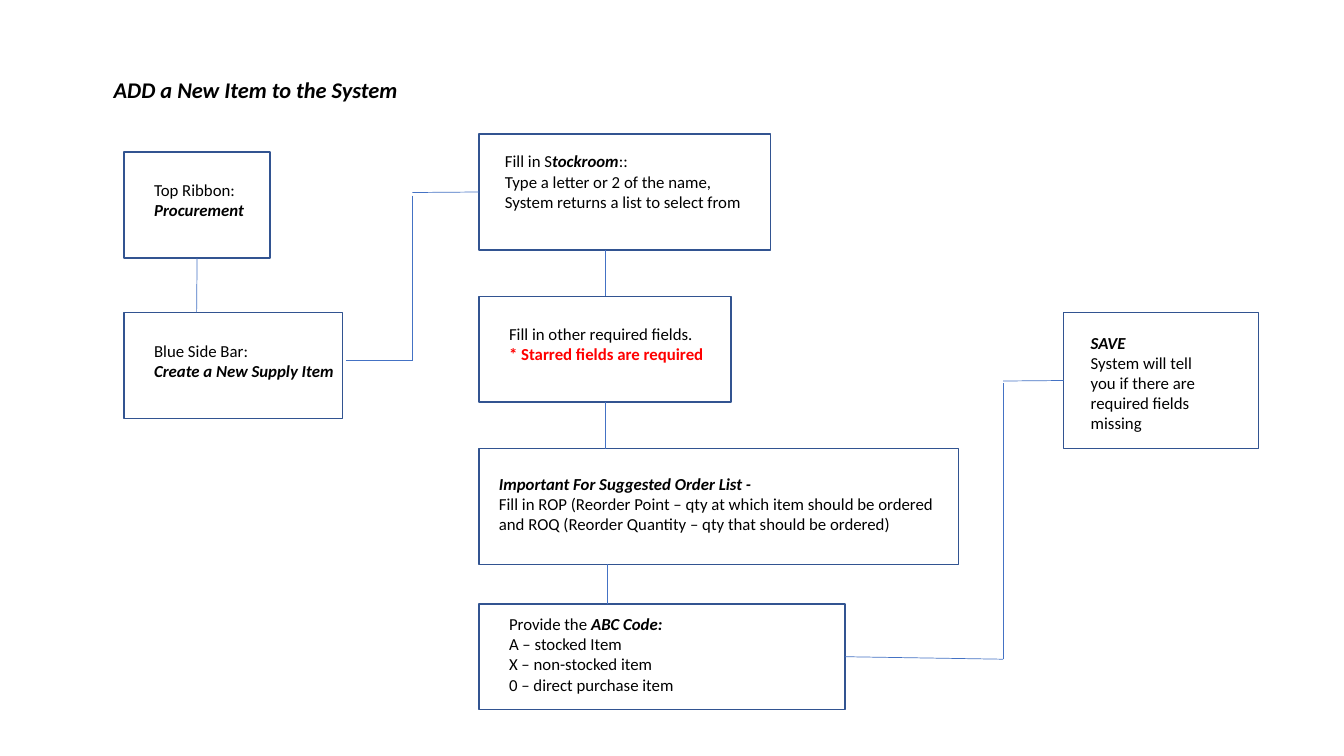
from dataclasses import dataclass
from typing import NamedTuple, Optional

from lxml.etree import SubElement
from pptx import Presentation
from pptx.dml.color import RGBColor
from pptx.enum.shapes import MSO_CONNECTOR, MSO_SHAPE
from pptx.enum.text import MSO_AUTO_SIZE
from pptx.oxml.ns import qn
from pptx.util import Inches, Pt

FONT = "Calibri"
BLACK, RED, BORDER, LINK = "000000", "FF0000", "325491", "4472C4"
TOP, LEFT, BOTTOM, RIGHT = range(4)


class Run(NamedTuple):
    text: str
    bold: bool = False
    italic: bool = False
    color: str = BLACK


class Area(NamedTuple):
    left: float
    top: float
    width: float
    height: float


@dataclass
class Step:
    name: str
    box: Area
    label: Area
    lines: list[list[Run]]
    wrap: bool = False


@dataclass
class Link:
    start: tuple[float, float]
    end: tuple[float, float]
    begin_at: Optional[tuple[str, int]] = None
    end_at: Optional[tuple[str, int]] = None


def strong(text: str) -> Run:
    return Run(text, bold=True, italic=True)


TITLE = [[strong("ADD a New Item to the System")]]

STEPS = [
    Step("ribbon", Area(1.23, 1.51, 1.45, 1.05), Area(1.43, 1.73, 1.11, 0.5),
         [[Run("Top Ribbon:")], [strong("Procurement")]]),
    Step("side bar", Area(1.23, 3.1, 2.17, 1.05), Area(1.43, 3.33, 2.01, 0.5),
         [[Run("Blue Side Bar:")], [strong("Create a New Supply Item")]]),
    Step("stockroom", Area(4.75, 1.33, 2.89, 1.15), Area(4.91, 1.45, 2.57, 0.71),
         [[Run("Fill in S"), strong("tockroom"), Run("::")],
          [Run("Type a letter or 2 of the name,")],
          [Run("System returns a list to select from")]]),
    Step("fields", Area(4.75, 2.94, 2.5, 1.05), Area(4.95, 3.16, 2.15, 0.5),
         [[Run("Fill in other required fields.")],
          [Run("* Starred fields are required", bold=True, color=RED)]]),
    Step("reorder", Area(4.75, 4.45, 4.76, 1.15), Area(4.85, 4.65, 4.56, 0.71),
         [[strong("Important For Suggested Order List -")],
          [Run("Fill in ROP (Reorder Point – qty at which item should be ordered")],
          [Run("and ROQ (Reorder Quantity – qty that should be ordered)")]]),
    Step("code", Area(4.75, 5.99, 3.63, 1.05), Area(4.95, 6.04, 3.31, 0.91),
         [[Run("Provide the "), strong("ABC Code:")],
          [Run("A – stocked Item")],
          [Run("X – non-stocked item")],
          [Run("0 – direct purchase item")]], wrap=True),
    Step("save", Area(10.55, 3.1, 1.93, 1.35), Area(10.72, 3.25, 1.46, 1.11),
         [[strong("SAVE")],
          [Run("System will tell you if there are required fields missing")]], wrap=True),
]

LINKS = [
    Link((1.95, 2.56), (1.95, 3.1), begin_at=("ribbon", BOTTOM)),
    # Side bar to stockroom
    Link((4.09, 1.94), (4.09, 3.58)),
    Link((3.43, 3.58), (4.09, 3.58)),
    Link((4.09, 1.91), (4.75, 1.91), end_at=("stockroom", LEFT)),
    # Code to save
    Link((9.95, 3.8), (9.95, 6.54)),
    Link((10.55, 3.78), (9.95, 3.78), begin_at=("save", LEFT)),
    Link((8.38, 6.52), (9.95, 6.54), begin_at=("code", RIGHT)),
    # Down the middle column
    Link((6, 2.48), (6, 2.94), end_at=("fields", TOP)),
    Link((6, 3.99), (6, 4.45), begin_at=("fields", BOTTOM)),
    Link((6.02, 5.6), (6.02, 5.99)),
]


def rgb(color: str) -> RGBColor:
    return RGBColor.from_string(color)


def add_run(p, text: str, *, size: float = 12, bold: bool = False,
            italic: bool = False, color: str = BLACK) -> None:
    r = p.add_run()
    r.text = text
    r.font.name, r.font.size = FONT, Pt(size)
    r.font.bold, r.font.italic = bold, italic
    r.font.color.rgb = rgb(color)


def add_label(s, area: Area, lines: list[list[Run]], *, size: float = 12,
              wrap: bool = False) -> None:
    tf = s.shapes.add_textbox(*map(Inches, area)).text_frame
    tf.word_wrap = wrap
    tf.auto_size = MSO_AUTO_SIZE.SHAPE_TO_FIT_TEXT
    for i, line in enumerate(lines):
        p = tf.add_paragraph() if i else tf.paragraphs[0]
        for run in line:
            add_run(p, run.text, size=size, bold=run.bold,
                    italic=run.italic, color=run.color)


def add_box(s, area: Area):
    sp = s.shapes.add_shape(MSO_SHAPE.RECTANGLE, *map(Inches, area))
    sp.shadow.inherit = False
    sp.fill.background()
    sp.line.color.rgb = rgb(BORDER)
    sp.line.width = Pt(1)
    return sp


def add_link(s, link: Link, boxes: dict) -> None:
    cx = s.shapes.add_connector(MSO_CONNECTOR.STRAIGHT,
                                *map(Inches, link.start + link.end))
    cx.line.color.rgb = rgb(LINK)
    cx.line.width = Pt(0.5)
    SubElement(cx._element.spPr, qn("a:effectLst"))
    if link.begin_at:
        name, side = link.begin_at
        cx.begin_connect(boxes[name], side)
    if link.end_at:
        name, side = link.end_at
        cx.end_connect(boxes[name], side)


def main() -> None:
    prs = Presentation()
    prs.slide_width, prs.slide_height = Inches(13.33), Inches(7.5)
    s = prs.slides.add_slide(prs.slide_layouts[6])

    # Title
    add_label(s, Area(1.03, 0.71, 3.06, 0.37), TITLE, size=16)

    # Steps
    boxes = {}
    for step in STEPS:
        boxes[step.name] = add_box(s, step.box)
        add_label(s, step.label, step.lines, wrap=step.wrap)

    # Links between steps
    for link in LINKS:
        add_link(s, link, boxes)

    prs.save("out.pptx")


if __name__ == "__main__":
    main()
